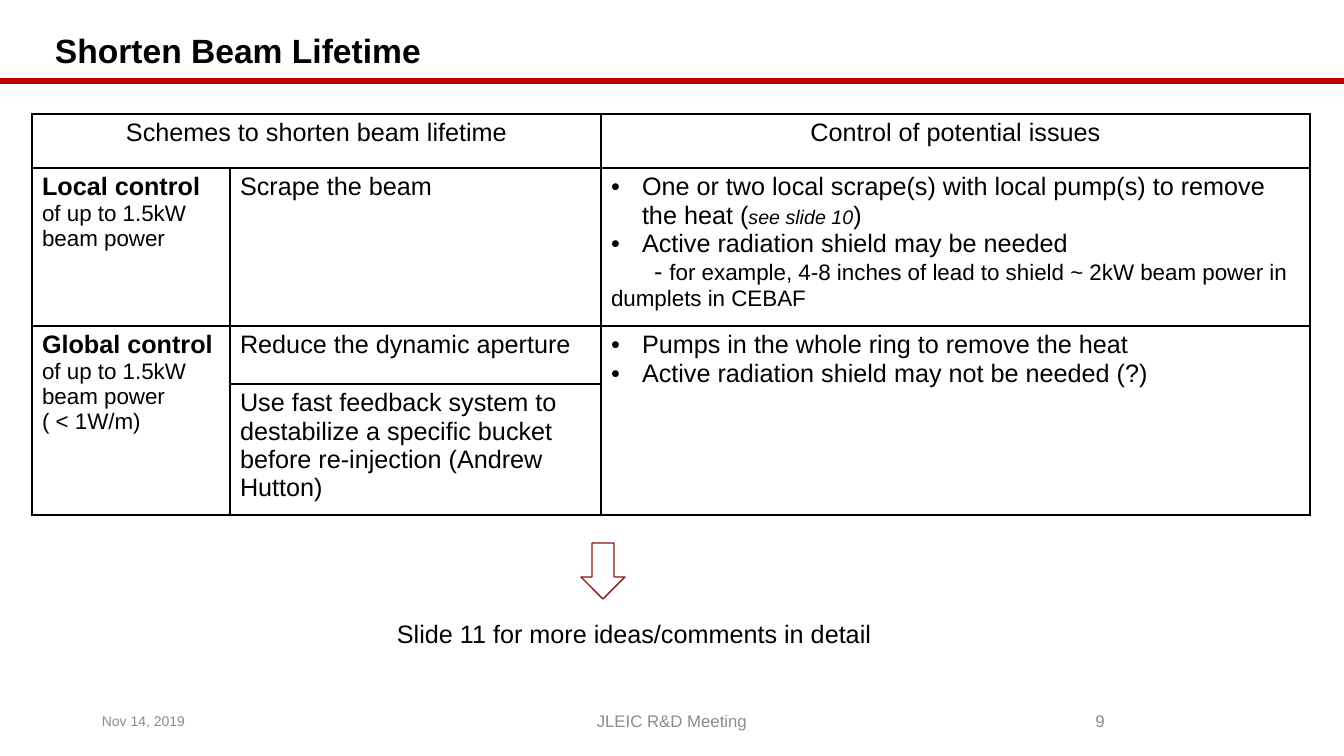
from dataclasses import dataclass

from lxml import etree
from pptx import Presentation
from pptx.dml.color import RGBColor
from pptx.enum.shapes import MSO_CONNECTOR, MSO_SHAPE
from pptx.enum.text import MSO_ANCHOR, PP_ALIGN
from pptx.oxml.ns import qn
from pptx.util import Pt

LEFT, CENTER = PP_ALIGN.LEFT, PP_ALIGN.CENTER
TOP, MIDDLE = MSO_ANCHOR.TOP, MSO_ANCHOR.MIDDLE
STRAIGHT = MSO_CONNECTOR.STRAIGHT
DOWN_ARROW = MSO_SHAPE.DOWN_ARROW

EMU_PER_PX = 9071.43
BULLET_INDENT = 31
DASH_INDENT = 43


@dataclass(frozen=True)
class Theme:
    font: str = "Arial"
    text: RGBColor = RGBColor(0x00, 0x00, 0x00)
    footer: RGBColor = RGBColor(0x8C, 0x8C, 0x8C)
    rule: RGBColor = RGBColor(0xC0, 0x00, 0x00)
    arrow: RGBColor = RGBColor(0x8D, 0x15, 0x15)
    border: str = "000000"
    title_size: int = 24
    body_size: int = 18
    detail_size: int = 16
    aside_size: int = 14
    footer_size: int = 12
    date_size: int = 10


THEME = Theme()


@dataclass(frozen=True)
class Span:
    """A stretch of text in one format."""
    text: str
    size: int = THEME.body_size
    bold: bool = False
    italic: bool = False


@dataclass(frozen=True)
class Line:
    """A paragraph of spans."""
    spans: tuple
    bullet: bool = False
    first_indent: int = 0


def line(text, **options):
    return Line((Span(text),), **options)


def detail(text):
    return Span(text, THEME.detail_size)


def heading(text):
    return Span(text, bold=True)


TABLE_CELLS = {
    (0, 0): [line("Schemes to shorten beam lifetime")],
    (0, 2): [line("Control of potential issues")],
    (1, 0): [Line((heading("Local control "), detail("of up to 1.5kW beam power")))],
    (1, 1): [line("Scrape the beam")],
    (1, 2): [
        Line((Span("One or two local scrape(s) with local pump(s) to remove the heat ("),
              Span("see slide 10", THEME.aside_size, italic=True),
              Span(")")), bullet=True),
        line("Active radiation shield may be needed", bullet=True),
        Line((Span("- "),
              detail("for example, 4-8 inches of lead to shield ~ 2kW beam power "
                     "in dumplets in CEBAF")), first_indent=DASH_INDENT),
    ],
    (2, 0): [
        Line((heading("Global control "), detail("of up to 1.5kW beam power"))),
        Line((detail("( < 1W/m)"),)),
    ],
    (2, 1): [line("Reduce the dynamic aperture")],
    (2, 2): [
        line("Pumps in the whole ring to remove the heat", bullet=True),
        line("Active radiation shield may not be needed (?)", bullet=True),
    ],
    (3, 1): [line("Use fast feedback system to destabilize a specific bucket "
                  "before re-injection (Andrew Hutton)")],
}
MERGES = [((0, 0), (0, 1)), ((2, 0), (3, 0)), ((2, 2), (3, 2))]
COLUMN_WIDTHS = [198, 371, 709]
ROW_HEIGHTS = [54, 148, 58, 130]


def px(length):
    return round(length * EMU_PER_PX)


def box(*lengths):
    return [px(length) for length in lengths]


def format_font(font, size, color, bold=False, italic=False):
    font.name = THEME.font
    font.size = Pt(size)
    font.bold = bold
    font.italic = italic
    font.color.rgb = color


def indent_paragraph(paragraph, content):
    properties = paragraph._p.get_or_add_pPr()
    if content.bullet:
        properties.set("marL", str(px(BULLET_INDENT)))
        properties.set("indent", str(-px(BULLET_INDENT)))
        etree.SubElement(properties, qn("a:buFont")).set("typeface", THEME.font)
        etree.SubElement(properties, qn("a:buChar")).set("char", "•")
    elif content.first_indent:
        properties.set("marL", "0")
        properties.set("indent", str(px(content.first_indent)))


def fill_text_frame(text_frame, lines, alignment):
    for index, content in enumerate(lines):
        paragraph = text_frame.add_paragraph() if index else text_frame.paragraphs[0]
        paragraph.alignment = alignment
        indent_paragraph(paragraph, content)
        for span in content.spans:
            run = paragraph.add_run()
            run.text = span.text
            format_font(run.font, span.size, THEME.text, span.bold, span.italic)


def draw_cell_borders(cell):
    properties = cell._tc.get_or_add_tcPr()
    for position, side in enumerate(("lnL", "lnR", "lnT", "lnB")):
        border = etree.Element(qn(f"a:{side}"), w=str(Pt(1)))
        fill = etree.SubElement(border, qn("a:solidFill"))
        etree.SubElement(fill, qn("a:srgbClr")).set("val", THEME.border)
        properties.insert(position, border)


def add_scheme_table(slide, left, top):
    table = slide.shapes.add_table(
        len(ROW_HEIGHTS), len(COLUMN_WIDTHS),
        *box(left, top, sum(COLUMN_WIDTHS), sum(ROW_HEIGHTS))).table
    table.first_row = False
    table.horz_banding = False
    for column, width in zip(table.columns, COLUMN_WIDTHS):
        column.width = px(width)
    for row, height in zip(table.rows, ROW_HEIGHTS):
        row.height = px(height)
    for cell in table.iter_cells():
        cell.fill.background()
        draw_cell_borders(cell)
    for first, last in MERGES:
        table.cell(*first).merge(table.cell(*last))
    for (row, column), lines in TABLE_CELLS.items():
        fill_text_frame(table.cell(row, column).text_frame, lines,
                        LEFT if row else CENTER)


def add_label(slide, text, bounds, size, color=THEME.text, alignment=LEFT,
              anchor=MIDDLE, bold=False):
    text_frame = slide.shapes.add_textbox(*box(*bounds)).text_frame
    text_frame.word_wrap = True
    text_frame.vertical_anchor = anchor
    text_frame.text = text
    paragraph = text_frame.paragraphs[0]
    paragraph.alignment = alignment
    format_font(paragraph.runs[0].font, size, color, bold)
    return paragraph


def add_title_rule(slide, start, end, y):
    rule = slide.shapes.add_connector(STRAIGHT, *box(start, y, end, y))
    rule.line.color.rgb = THEME.rule
    rule.line.width = Pt(4.5)
    etree.SubElement(rule._element.spPr, qn("a:effectLst"))


def add_down_arrow(slide, *bounds):
    arrow = slide.shapes.add_shape(DOWN_ARROW, *box(*bounds))
    arrow.shadow.inherit = False
    arrow.fill.background()
    arrow.line.color.rgb = THEME.arrow
    arrow.line.width = Pt(1)


def main():
    presentation = Presentation()
    presentation.slide_width, presentation.slide_height = box(1344, 756)
    slide = presentation.slides.add_slide(presentation.slide_layouts[6])

    add_title_rule(slide, -2, 1344, 81)
    title = add_label(slide, "Shorten Beam Lifetime", (45, 26, 1244, 53),
                      THEME.title_size, bold=True)
    title.line_spacing = 0.9
    add_label(slide, "Nov 14, 2019", (92, 701, 302, 40),
              THEME.date_size, THEME.footer)
    add_label(slide, "JLEIC R&D Meeting", (445, 701, 454, 40),
              THEME.footer_size, THEME.footer, CENTER)
    add_label(slide, "9", (949, 701, 302, 40),
              THEME.footer_size, THEME.footer, CENTER)
    add_scheme_table(slide, 32, 114)
    add_label(slide, "Slide 11 for more ideas/comments in detail",
              (387, 613, 509, 41), THEME.body_size, anchor=TOP)
    add_down_arrow(slide, 581, 543, 44, 56)

    presentation.save("out.pptx")


if __name__ == "__main__":
    main()
